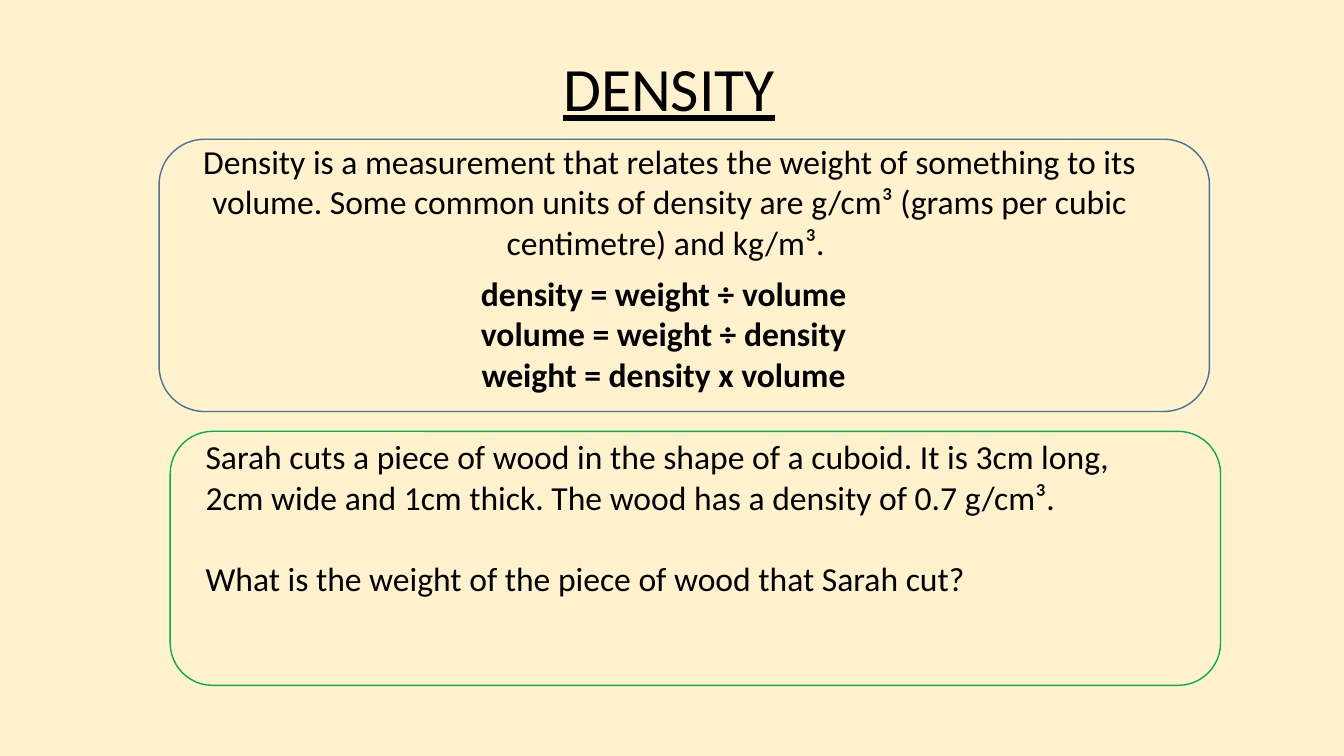
import pptx
import pptx.util
import pptx.dml.color
import pptx.enum.shapes
import pptx.enum.text

Cm, Pt = pptx.util.Cm, pptx.util.Pt
RGB = pptx.dml.color.RGBColor
ALIGN = pptx.enum.text.PP_ALIGN
ANCHOR = pptx.enum.text.MSO_ANCHOR

COLORS = {"background": "FFF2CC", "text": "000000",
          "definition": "43739E", "problem": "00B050"}

# Positions are left, top, width, height in centimetres
FRAMES = [
    ("definition", (4.01, 3.51, 26.47, 6.86)),
    ("problem", (4.29, 10.87, 26.47, 6.4)),
]

BODY = {"size": Pt(24), "name": "Calibri"}
TITLE = {**BODY, "size": Pt(44), "underline": True}
FORMULA = {**BODY, "bold": True}
BLANK_LINE = Pt(29.3)

TEXTS = [
    {"at": (5.92, 0.48, 21.89, 3.68), "font": TITLE, "anchor": ANCHOR.MIDDLE,
     "format": {"alignment": ALIGN.CENTER, "line_spacing": 0.9},
     "lines": ["DENSITY"]},
    {"at": (4.34, 3.43, 25.07, 3.33), "font": BODY, "anchor": ANCHOR.TOP,
     "format": {"alignment": ALIGN.CENTER},
     "lines": ["Density is a measurement that relates the weight of something "
               "to its volume. Some common units of density are g/cm³ (grams "
               "per cubic centimetre) and kg/m³. "]},
    {"at": (4.93, 10.87, 24.64, 4.37), "font": BODY, "anchor": ANCHOR.TOP,
     "format": {"alignment": ALIGN.LEFT}, "gap": BLANK_LINE,
     "lines": ["Sarah cuts a piece of wood in the shape of a cuboid. It is 3cm "
               "long, 2cm wide and 1cm thick. The wood has a density of 0.7 g/cm³.",
               "What is the weight of the piece of wood that Sarah cut?"]},
    {"at": (8.05, 6.75, 17.35, 3.33), "font": FORMULA, "anchor": ANCHOR.TOP,
     "format": {"alignment": ALIGN.CENTER},
     "lines": ["density = weight ÷ volume",
               "volume = weight ÷ density",
               "weight = density x volume"]},
]


def color(name):
    return RGB.from_string(COLORS[name])


def set_all(obj, values):
    for name, value in values.items():
        setattr(obj, name, value)


def add_frame(slide, name, at):
    sp = slide.shapes.add_shape(
        pptx.enum.shapes.MSO_SHAPE.ROUNDED_RECTANGLE, *map(Cm, at))
    sp.shadow.inherit = False
    sp.fill.background()
    sp.line.color.rgb = color(name)
    sp.line.width = Pt(1)


def add_text(slide, text):
    tf = slide.shapes.add_textbox(*map(Cm, text["at"])).text_frame
    set_all(tf, {"word_wrap": True, "vertical_anchor": text["anchor"]})
    for i, line in enumerate(text["lines"]):
        p = tf.add_paragraph() if i else tf.paragraphs[0]
        set_all(p, text["format"])
        if i and "gap" in text:
            p.space_before = text["gap"]
        r = p.add_run()
        r.text = line
        set_all(r.font, text["font"])
        r.font.color.rgb = color("text")


def main():
    prs = pptx.Presentation()
    set_all(prs, {"slide_width": Cm(33.87), "slide_height": Cm(19.05)})
    slide = prs.slides.add_slide(prs.slide_layouts[6])
    slide.background.fill.solid()
    slide.background.fill.fore_color.rgb = color("background")
    for name, at in FRAMES:
        add_frame(slide, name, at)
    for text in TEXTS:
        add_text(slide, text)
    prs.save("out.pptx")


if __name__ == "__main__":
    main()
